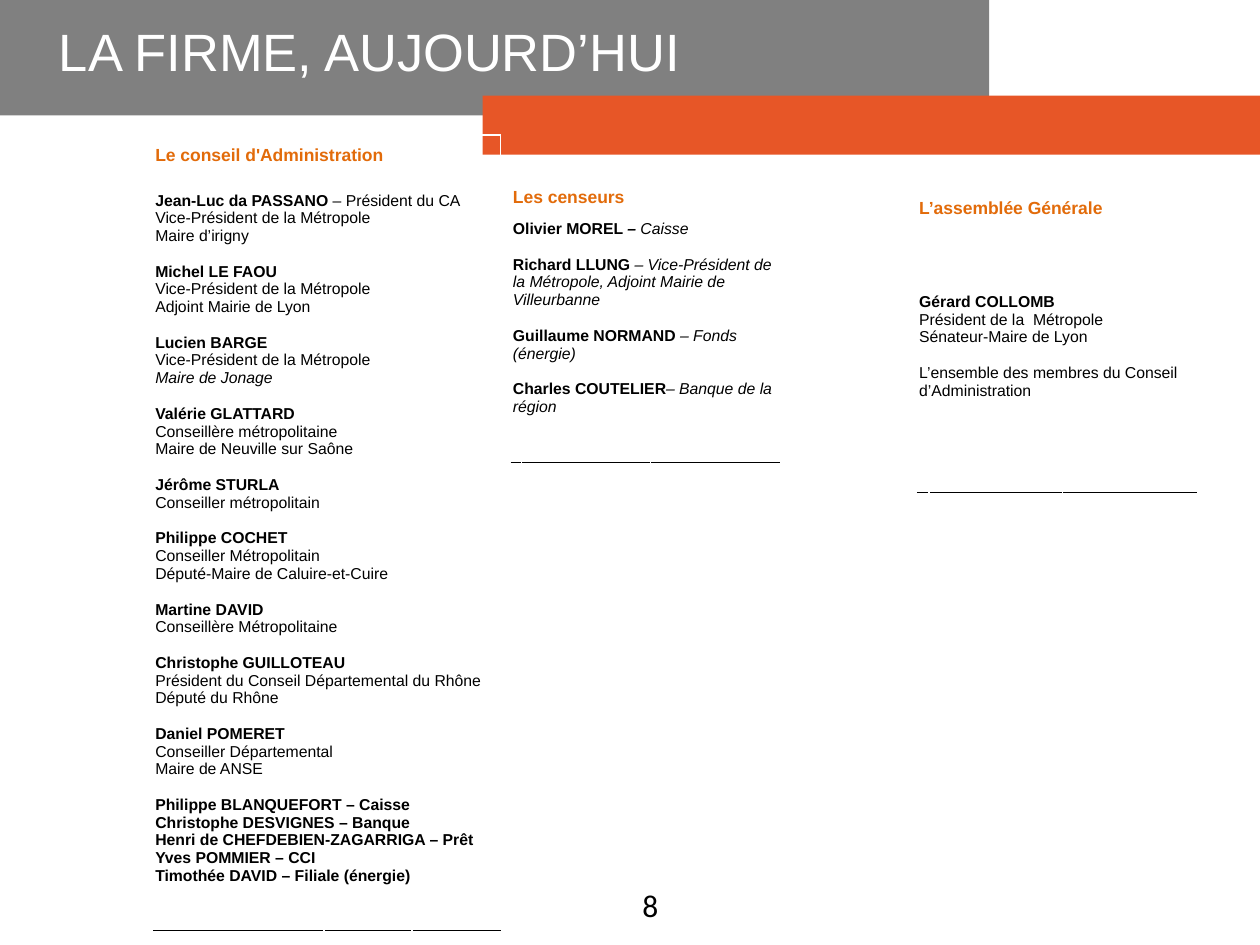
from lxml import etree
from pptx import Presentation
from pptx.dml.color import RGBColor
from pptx.enum.shapes import MSO_SHAPE
from pptx.enum.text import MSO_ANCHOR
from pptx.oxml.ns import qn
from pptx.util import Cm, Pt

RECTANGLE = MSO_SHAPE.RECTANGLE
MIDDLE, BOTTOM = MSO_ANCHOR.MIDDLE, MSO_ANCHOR.BOTTOM
GREY, ORANGE, HEADING = "808080", "E75627", "E26B0A"
BLACK, WHITE = "000000", "FFFFFF"
BODY_SIZE = 9
GROUP_GAP = 10.35  # one line of body text, in points
INSET = 0.03
HEADING_HEIGHT = 0.41

# Each group is a list of lines; a line is a list of (text, style) runs.
# Styles: "b" bold, "i" italic, "bi" both, "" plain.


def member(name, *roles):
    return [[(name, "b")]] + [[(role, "")] for role in roles]


BOARD = [
    [[("Jean-Luc da PASSANO ", "b"), ("– Président du CA", "")],
     [("Vice-Président de la Métropole", "")],
     [("Maire d’irigny", "")]],
    member("Michel LE FAOU", "Vice-Président de la Métropole", "Adjoint Mairie de Lyon"),
    member("Lucien BARGE", "Vice-Président de la Métropole") + [[("Maire de Jonage", "i")]],
    member("Valérie GLATTARD", "Conseillère métropolitaine", "Maire de Neuville sur Saône"),
    member("Jérôme STURLA", "Conseiller métropolitain"),
    member("Philippe COCHET", "Conseiller Métropolitain", "Député-Maire de Caluire-et-Cuire"),
    member("Martine DAVID", "Conseillère Métropolitaine"),
    member("Christophe GUILLOTEAU", "Président du Conseil Départemental du Rhône",
           "Député du Rhône"),
    member("Daniel POMERET", "Conseiller Départemental", "Maire de ANSE"),
    [[(line, "b")] for line in (
        "Philippe BLANQUEFORT – Caisse",
        "Christophe DESVIGNES – Banque",
        "Henri de CHEFDEBIEN-ZAGARRIGA – Prêt",
        "Yves POMMIER – CCI",
        "Timothée DAVID – Filiale (énergie)")],
]
ASSEMBLY = [
    member("Gérard COLLOMB", "Président de la  Métropole", "Sénateur-Maire de Lyon"),
    [[("L’ensemble des membres du Conseil d’Administration", "")]],
]
CENSORS = [
    [[("Olivier MOREL ", "b"), ("– ", "bi"), ("Caisse", "i")]],
    [[("Richard LLUNG ", "b"),
      ("– Vice-Président de la Métropole, Adjoint Mairie de Villeurbanne", "i")]],
    [[("Guillaume NORMAND ", "b"), ("– Fonds (énergie)", "i")]],
    [[("Charles COUTELIER", "b"), ("– Banque de la région", "i")]],
]


def color(hex_value):
    return RGBColor.from_string(hex_value)


def format_font(font, size, hex_value, name="Arial", style=""):
    font.name, font.size = name, Pt(size)
    font.color.rgb = color(hex_value)
    font.bold, font.italic = "b" in style, "i" in style


def add_band(slide, left, top, width, height, hex_value):
    band = slide.shapes.add_shape(RECTANGLE, Cm(left), Cm(top), Cm(width), Cm(height))
    band.shadow.inherit = False
    band.fill.solid()
    band.fill.fore_color.rgb = color(hex_value)
    band.line.fill.background()


def add_label(slide, left, top, width, height, text, size, hex_value, name, anchor):
    label = slide.shapes.add_textbox(Cm(left), Cm(top), Cm(width), Cm(height))
    frame = label.text_frame
    frame.word_wrap = True
    frame.vertical_anchor = anchor
    frame.text = text
    format_font(frame.paragraphs[0].runs[0].font, size, hex_value, name)


def add_header(slide, left, top, width):
    """Grey and orange bands with the slide title."""
    add_band(slide, left, top, 19.94, 2.33, GREY)
    add_band(slide, left + 9.73, top + 1.93, width - 9.73, 1.19, ORANGE)
    add_label(slide, left + 0.94, top + 0.1, 19, 1.83, "LA FIRME, AUJOURD’HUI",
              30, WHITE, "Arial", MIDDLE)


def set_insets(cell, top=INSET, bottom=0):
    cell.margin_left = cell.margin_right = Cm(INSET)
    cell.margin_top, cell.margin_bottom = Cm(top), Cm(bottom)


def add_bottom_rule(cell):
    """Thin black lower border on an empty cell with a small line height."""
    properties = cell._tc.get_or_add_tcPr()
    rule = etree.Element(qn("a:lnB"), w=str(Pt(0.5)))
    fill = etree.SubElement(rule, qn("a:solidFill"))
    etree.SubElement(fill, qn("a:srgbClr"), val=BLACK)
    properties.insert(0, rule)
    etree.SubElement(cell.text_frame.paragraphs[0]._p, qn("a:endParaRPr"), sz="400")


def fill_groups(frame, groups):
    paragraph = frame.paragraphs[0]
    for group_index, group in enumerate(groups):
        for line_index, line in enumerate(group):
            if group_index or line_index:
                paragraph = frame.add_paragraph()
            if group_index and not line_index:
                paragraph.space_before = Pt(GROUP_GAP)
            for text, style in line:
                run = paragraph.add_run()
                run.text = text
                format_font(run.font, BODY_SIZE, BLACK, style=style)


def add_member_list(slide, left, top, columns, rows, heading, groups,
                    body_top=INSET, body_bottom=0):
    """Heading row, body row and a closing rule under three columns."""
    frame = slide.shapes.add_table(len(rows), len(columns), Cm(left), Cm(top),
                                   Cm(sum(columns)), Cm(sum(rows)))
    members = frame.table
    members.first_row = members.horz_banding = False
    for column, width in zip(members.columns, columns):
        column.width = Cm(width)
    for row, height in zip(members.rows, rows):
        row.height = Cm(height)
    for cell in members.iter_cells():
        cell.fill.background()
        set_insets(cell)
    for row in (0, 1):
        members.cell(row, 0).merge(members.cell(row, len(columns) - 1))

    heading_cell, body_cell = members.cell(0, 0), members.cell(1, 0)
    heading_cell.vertical_anchor = BOTTOM
    heading_cell.text_frame.text = heading
    format_font(heading_cell.text_frame.paragraphs[0].runs[0].font, 10, HEADING, style="b")

    body_cell.vertical_anchor = MIDDLE
    set_insets(body_cell, body_top, body_bottom)
    fill_groups(body_cell.text_frame, groups)

    for column in range(len(columns)):
        add_bottom_rule(members.cell(2, column))


def main():
    deck = Presentation()
    deck.slide_width, deck.slide_height = Cm(25.4), Cm(19.05)
    slide = deck.slides.add_slide(deck.slide_layouts[6])

    add_header(slide, 0, 0, 25.4)
    add_member_list(slide, 3.1, 2.72, (3.43, 1.78, 1.78), (0.61, 15.01, 0.41),
                    "Le conseil d'Administration", BOARD)
    add_member_list(slide, 18.5, 3.94, (0.23, 2.69, 2.69), (HEADING_HEIGHT, 4.78, 0.76),
                    "L’assemblée Générale", ASSEMBLY, body_top=0.4)
    add_member_list(slide, 10.31, 3.73, (0.2, 2.6, 2.6), (HEADING_HEIGHT, 4.78, 0.36),
                    "Les censeurs", CENSORS, body_bottom=0.36)

    # Page number
    add_label(slide, 12.7, 17.73, 1.4, 1.02, "8", 18, BLACK, "Calibri", MSO_ANCHOR.TOP)

    deck.save("out.pptx")


if __name__ == "__main__":
    main()
